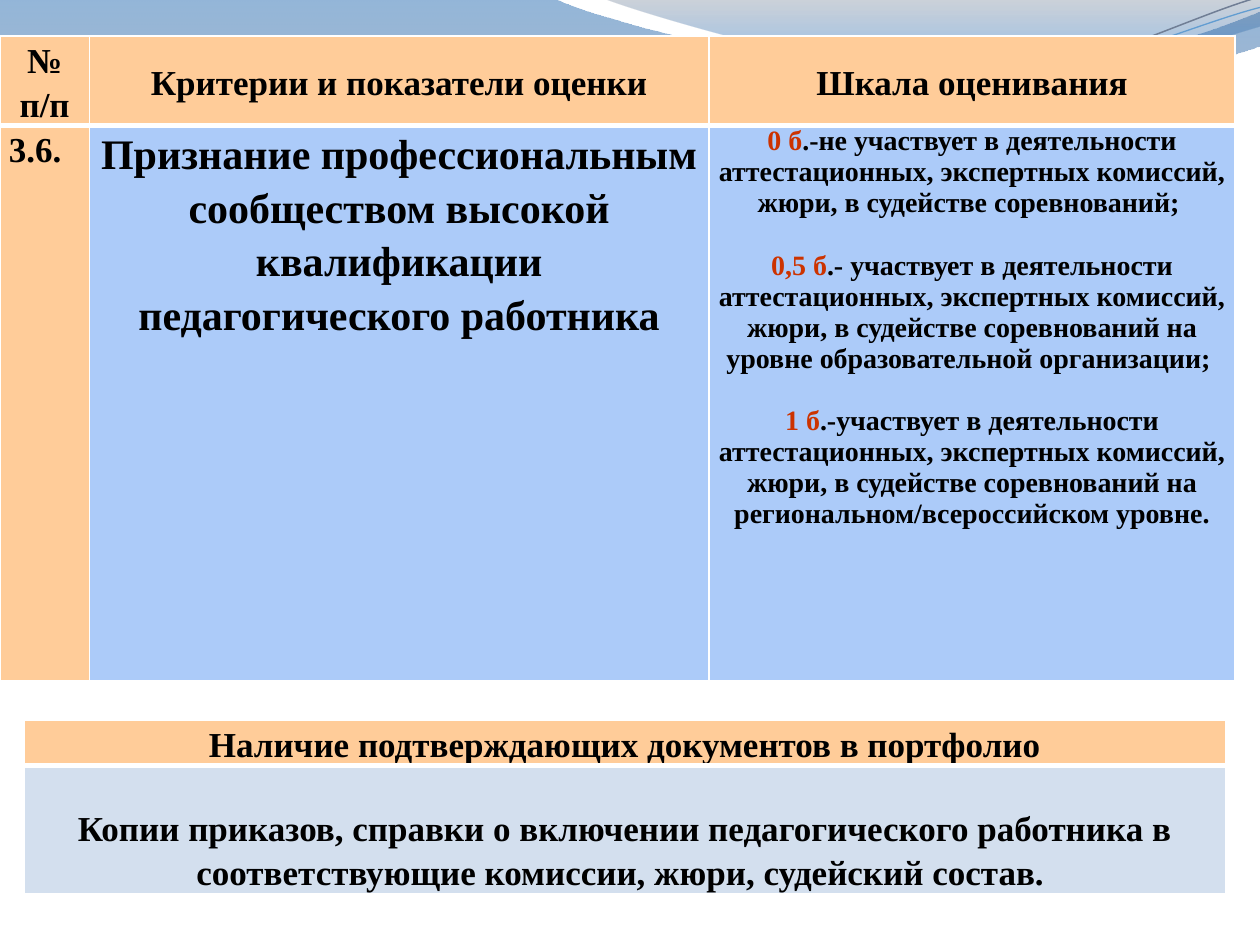
import math

import lxml.etree
import pptx
import pptx.dml.color
import pptx.enum.text
import pptx.oxml
import pptx.oxml.ns
import pptx.util

Cm = pptx.util.Cm
Pt = pptx.util.Pt
ALIGN = pptx.enum.text.PP_ALIGN
ANCHOR = pptx.enum.text.MSO_ANCHOR
FONT = "Times New Roman"
PEACH, BLUE, PALE = "FFCC99", "ACCBF9", "D3DFEE"
BLACK, RED, WHITE = "000000", "CC3300", "FFFFFF"
WAVE_ANGLE = -2.7
WAVE_CENTER = (12.67, 1.46)

BAND = [
    [(0, -0.03)], [(11.18, -0.03)],
    [(12.09, 0.43), (16.87, 1.6), (19.25, 1.6)],
    [(21.67, 1.6), (24.33, 0.66), (25.4, 0.23)],
    [(25.43, 0.91)],
    [(24.97, 1.12), (22.1, 1.93), (18.95, 1.91)],
    [(15.8, 1.91), (9.7, 0.71), (6.53, 0.86)],
    [(3.28, 0.89), (1.17, 2.11), (-0.03, 2.87)],
    [(0, -0.03)],
]
CREST = [
    [(12.17, -0.03)],
    [(12.93, 0.28), (17.32, 1.57), (19.53, 1.65)],
    [(21.74, 1.75), (24.41, 0.81), (25.4, 0.53)],
    [(25.4, 0)],
    [(12.17, -0.03)],
]
DARK_WAVE = [
    [(0, 2.82)],
    [(1.22, 2.36), (4.01, 1.45), (7.04, 1.32)],
    [(10.03, 1.19), (15.06, 2.26), (18.11, 2.03)],
    [(21.16, 1.8), (23.83, 0.38), (25.35, -0.05)],
]
LIGHT_WAVE = [
    [(0, 2.64)],
    [(1.19, 2.44), (4.17, 1.55), (7.19, 1.42)],
    [(10.24, 1.3), (15.16, 2.11), (18.21, 1.91)],
    [(21.23, 1.8), (23.9, 0.53), (25.4, 0.15)],
]
SCALE = [
    [("0 б", RED), (".-не участвует в деятельности аттестационных, экспертных "
                    "комиссий, жюри, в судействе соревнований; ", BLACK)],
    [("0,5 б", RED), (".- участвует в деятельности аттестационных, экспертных "
                      "комиссий, жюри, в судействе соревнований на уровне "
                      "образовательной организации; ", BLACK)],
    [("1 б", RED), (".-участвует в деятельности аттестационных, экспертных "
                    "комиссий, жюри, в судействе соревнований на "
                    "региональном/всероссийском уровне.", BLACK)],
]


def color(value):
    return pptx.dml.color.RGBColor.from_string(value)


def turn(point, center, degrees):
    angle = math.radians(degrees)
    dx, dy = point[0] - center[0], point[1] - center[1]
    return (center[0] + dx * math.cos(angle) - dy * math.sin(angle),
            center[1] + dx * math.sin(angle) + dy * math.cos(angle))


def bend(shape, segments):
    lines = list(shape._element.iter(pptx.oxml.ns.qn("a:lnTo")))
    for segment in segments[1:]:
        group, lines = lines[:len(segment)], lines[len(segment):]
        if len(segment) == 3:
            curve = lxml.etree.Element(pptx.oxml.ns.qn("a:cubicBezTo"))
            group[0].addprevious(curve)
            for line in group:
                curve.append(line[0])
                line.getparent().remove(line)


def add_outline(page, segments, close):
    points = [(Cm(x), Cm(y)) for segment in segments for x, y in segment]
    builder = page.shapes.build_freeform(*points[0])
    builder.add_line_segments(points[1:], close=close)
    shape = builder.convert_to_shape()
    shape.shadow.inherit = False
    bend(shape, segments)
    return shape


def add_gradient_shape(page, segments, stops):
    shape = add_outline(page, segments, True)
    shape.line.fill.background()
    shape.fill.gradient()
    shape.fill.gradient_angle = 270
    for stop, (position, value, opacity) in zip(shape.fill.gradient_stops, stops):
        stop.position = position
        stop.color.rgb = color(value)
    tags = shape.fill._xPr.iter(pptx.oxml.ns.qn("a:srgbClr"))
    for tag, (position, value, opacity) in zip(tags, stops):
        alpha = lxml.etree.SubElement(tag, pptx.oxml.ns.qn("a:alpha"))
        alpha.set("val", str(opacity * 1000))


def add_wave(page, segments, value, width):
    level = [[turn(point, WAVE_CENTER, -WAVE_ANGLE) for point in segment]
             for segment in segments]
    shape = add_outline(page, level, False)
    shape.fill.background()
    shape.line.color.rgb = color(value)
    shape.line.width = Pt(width)
    shape.rotation = WAVE_ANGLE


def set_borders(cell, top, bottom):
    widths = {"lnL": 1, "lnR": 1, "lnT": top, "lnB": bottom}
    properties = cell._tc.get_or_add_tcPr()
    for index, (side, width) in enumerate(widths.items()):
        properties.insert(index, pptx.oxml.parse_xml(
            f'<a:{side} {pptx.oxml.ns.nsdecls("a")} w="{Pt(width)}"><a:solidFill>'
            f'<a:srgbClr val="{WHITE}"/></a:solidFill></a:{side}>'))


def add_grid(page, left, top, columns, rows):
    frame = page.shapes.add_table(len(rows), len(columns), Cm(left), Cm(top),
                                  Cm(sum(columns)), Cm(sum(rows)))
    table = frame.table
    table.horz_banding = False
    for column, width in zip(table.columns, columns):
        column.width = Cm(width)
    for row, height in zip(table.rows, rows):
        row.height = Cm(height)
    return table


def fill_cell(table, row, column, paragraphs, fill, size=20, anchor=ANCHOR.TOP,
              align=ALIGN.CENTER, spacing=1.15, gap=0):
    cell = table.cell(row, column)
    cell.margin_left = cell.margin_right = Cm(0.18)
    cell.margin_top = cell.margin_bottom = 0
    cell.vertical_anchor = anchor
    cell.fill.solid()
    cell.fill.fore_color.rgb = color(fill)
    set_borders(cell, *((3, 1) if row else (1, 3)))
    for index, spans in enumerate(paragraphs):
        frame = cell.text_frame
        para = frame.add_paragraph() if index else frame.paragraphs[0]
        para.alignment = align
        para.line_spacing = spacing
        if index and gap:
            para.space_before = Pt(gap)
        for text, value in spans:
            span = para.add_run()
            span.text = text
            span.font.name = FONT
            span.font.size = Pt(size)
            span.font.bold = True
            span.font.color.rgb = color(value)


def plain(*lines):
    return [[(line, BLACK)] for line in lines]


def add_criteria(page):
    table = add_grid(page, 0, 0.73, [1.8, 12.49, 10.61], [1.8, 11.2])
    fill_cell(table, 0, 0, plain("№", "п/п"), PEACH)
    fill_cell(table, 0, 1, plain("Критерии и показатели оценки"), PEACH,
              anchor=ANCHOR.MIDDLE)
    fill_cell(table, 0, 2, plain("Шкала оценивания"), PEACH, anchor=ANCHOR.MIDDLE)
    fill_cell(table, 1, 0, plain("3.6."), PEACH, align=ALIGN.LEFT)
    fill_cell(table, 1, 1, plain("Признание профессиональным сообществом высокой "
                                 "квалификации педагогического работника"),
              BLUE, size=24)
    fill_cell(table, 1, 2, SCALE, BLUE, size=16, spacing=1, gap=17.8)


def add_documents(page):
    table = add_grid(page, 0.49, 14.52, [24.21], [0.91, 2.58])
    fill_cell(table, 0, 0, plain("Наличие подтверждающих документов в портфолио"),
              PEACH, anchor=ANCHOR.MIDDLE)
    fill_cell(table, 1, 0, plain("Копии приказов, справки о включении педагогического "
                                 "работника в соответствующие комиссии, жюри, "
                                 "судейский состав. "), PALE, anchor=ANCHOR.BOTTOM)


def main():
    deck = pptx.Presentation()
    deck.slide_width, deck.slide_height = Cm(25.4), Cm(19.05)
    page = deck.slides.add_slide(deck.slide_layouts[6])
    add_gradient_shape(page, BAND, [(0, "125EAA", 45), (1, "697FA4", 55)])
    add_gradient_shape(page, CREST, [(0, "596982", 30), (0.8, "0670DA", 45)])
    add_wave(page, DARK_WAVE, "707E95", 0.85)
    add_wave(page, LIGHT_WAVE, "629DD1", 0.75)
    add_criteria(page)
    add_documents(page)
    deck.save("out.pptx")


if __name__ == "__main__":
    main()
